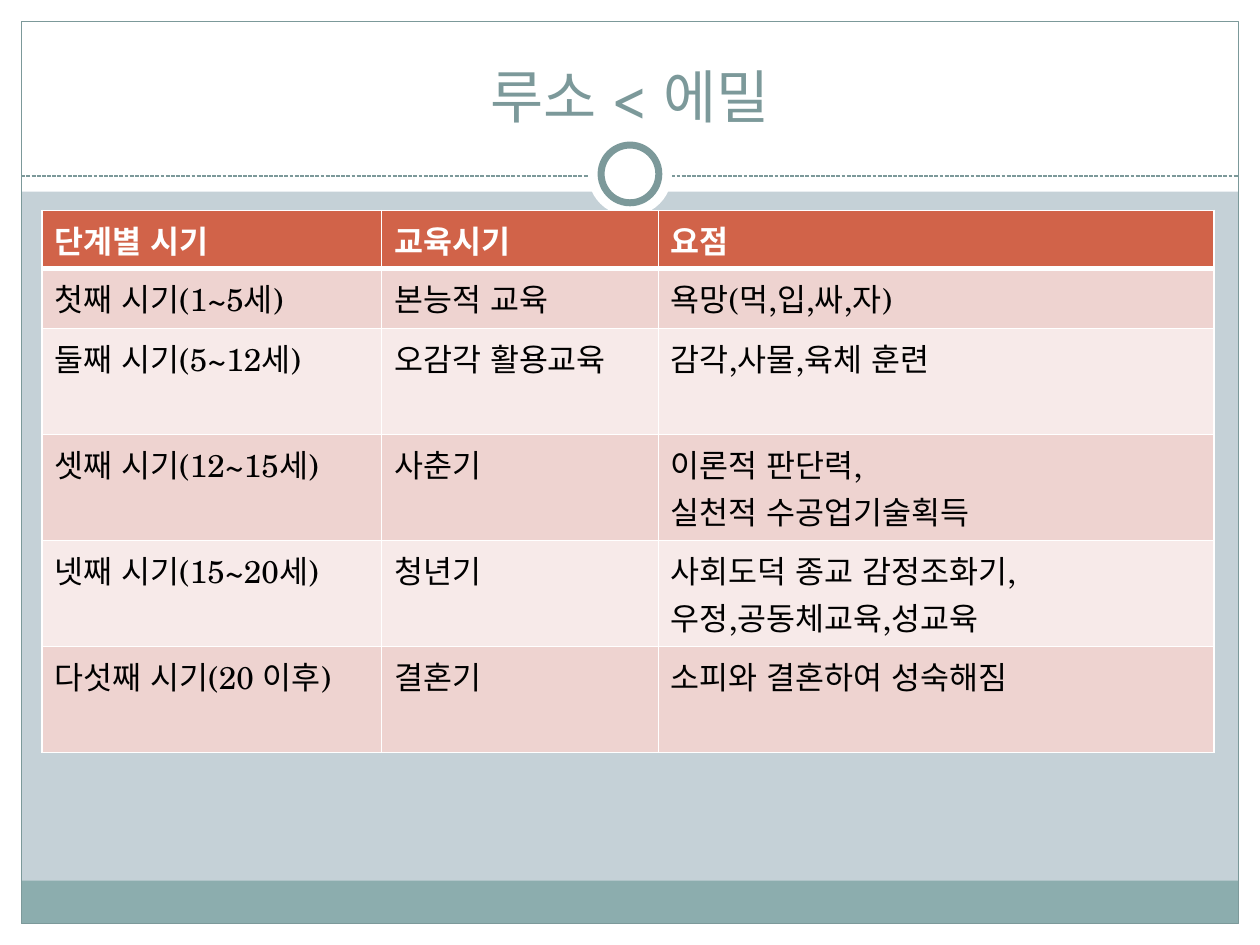
from lxml import etree
from pptx import Presentation
from pptx.dml.color import RGBColor
from pptx.enum.dml import MSO_LINE_DASH_STYLE as Dash
from pptx.enum.lang import MSO_LANGUAGE_ID as Language
from pptx.enum.shapes import MSO_CONNECTOR as Connector, MSO_SHAPE as Shape
from pptx.enum.text import MSO_ANCHOR as Anchor, PP_ALIGN as Align
from pptx.oxml.ns import qn
from pptx.util import Pt

FONT = "TeX Gyre Schola"
WHITE, BLACK, TEAL, TEAL_LIGHT = "FFFFFF", "000000", "7C999A", "8CADAE"
BACKGROUND, HEADER, BANDS = "C5D1D7", "D16349", ("EED3D0", "F7EAE9")
WIDTH, HEIGHT, MARGIN = 720, 540, 12.2

COLUMN_WIDTHS = (194.1, 158.1, 317.5)
ROW_HEIGHTS = (33.4, 34, 60.6, 60.6, 60.6, 60.6)
STAGES = (
    ("단계별 시기", "교육시기", "요점"),
    ("첫째 시기(1~5세)", "본능적 교육", "욕망(먹,입,싸,자)"),
    ("둘째 시기(5~12세)", "오감각 활용교육", "감각,사물,육체 훈련"),
    ("셋째 시기(12~15세)", "사춘기", "이론적 판단력,\n실천적 수공업기술획득"),
    ("넷째 시기(15~20세)", "청년기", "사회도덕 종교 감정조화기,\n우정,공동체교육,성교육"),
    ("다섯째 시기(20 이후)", "결혼기", "소피와 결혼하여 성숙해짐"),
)


def color(value):
    return RGBColor.from_string(value)


def set_fill(fill, value):
    fill.solid()
    fill.fore_color.rgb = color(value)


def write_text(frame, text, *, size, text_color, bold=False, align=Align.LEFT):
    """Fill a text frame, one paragraph per line of text."""
    frame.word_wrap = True
    frame.text = text
    for paragraph in frame.paragraphs:
        paragraph.alignment = align
        for run in paragraph.runs:
            font = run.font
            font.name, font.size, font.bold = FONT, Pt(size), bold
            font.color.rgb = color(text_color)
            font.language_id = Language.KOREAN


def add_shape(slide, kind, left, top, width, height, fill=None, line=None, line_width=0.75):
    shape = slide.shapes.add_shape(kind, Pt(left), Pt(top), Pt(width), Pt(height))
    shape.shadow.inherit = False
    if fill:
        set_fill(shape.fill, fill)
    else:
        shape.fill.background()
    if line:
        shape.line.color.rgb = color(line)
        shape.line.width = Pt(line_width)
    else:
        shape.line.fill.background()


def add_dashed_line(slide, left, right, y):
    line = slide.shapes.add_connector(Connector.STRAIGHT, Pt(left), Pt(y), Pt(right), Pt(y))
    line.line.color.rgb = color(TEAL)
    line.line.width = Pt(0.75)
    line.line.dash_style = Dash.SQUARE_DOT
    etree.SubElement(line._element.spPr, qn("a:effectLst"))


def add_circle(slide, center_y, diameter, **style):
    """Add a circle centred across the slide."""
    radius = diameter / 2
    add_shape(slide, Shape.OVAL, WIDTH / 2 - radius, center_y - radius,
              diameter, diameter, WHITE, **style)


def add_frame(slide):
    inner_width, inner_height = WIDTH - 2 * MARGIN, HEIGHT - 2 * MARGIN
    bottom = HEIGHT - MARGIN
    for box in ((0, bottom, WIDTH, MARGIN), (0, 0, WIDTH, 109.5),
                (0, 0, MARGIN, HEIGHT), (WIDTH - MARGIN, 0, MARGIN, HEIGHT)):
        add_shape(slide, Shape.RECTANGLE, *box, WHITE)
    add_shape(slide, Shape.RECTANGLE, MARGIN, bottom - 24.5, inner_width, 24.5, TEAL_LIGHT)
    add_shape(slide, Shape.RECTANGLE, MARGIN, MARGIN, inner_width, inner_height, line=TEAL)
    add_dashed_line(slide, MARGIN, WIDTH - MARGIN, 100.6)
    add_circle(slide, 99.4, 48)
    add_circle(slide, 99.4, 33, line=TEAL, line_width=4)


def add_title(slide, text):
    box = slide.shapes.add_textbox(Pt(24), Pt(18), Pt(672), Pt(60))
    box.text_frame.vertical_anchor = Anchor.BOTTOM
    write_text(box.text_frame, text, size=33, text_color=TEAL, align=Align.CENTER)


def set_borders(cell, top, bottom):
    """Draw white borders; the sides are one point wide."""
    properties = cell._tc.get_or_add_tcPr()
    for index, (side, width) in enumerate((("L", 1), ("R", 1), ("T", top), ("B", bottom))):
        border = etree.Element(qn(f"a:ln{side}"), w=str(Pt(width)))
        fill = etree.SubElement(border, qn("a:solidFill"))
        etree.SubElement(fill, qn("a:srgbClr"), val=WHITE)
        properties.insert(index, border)


def add_stage_table(slide):
    table = slide.shapes.add_table(
        len(STAGES), len(COLUMN_WIDTHS), Pt(24), Pt(120.2),
        Pt(sum(COLUMN_WIDTHS)), Pt(sum(ROW_HEIGHTS))).table
    for column, width in zip(table.columns, COLUMN_WIDTHS):
        column.width = Pt(width)
    for row_index, (row, height, texts) in enumerate(zip(table.rows, ROW_HEIGHTS, STAGES)):
        row.height = Pt(height)
        is_header = row_index == 0
        for cell, text in zip(row.cells, texts):
            set_fill(cell.fill, HEADER if is_header else BANDS[(row_index - 1) % 2])
            set_borders(cell, top=3 if row_index == 1 else 1, bottom=3 if is_header else 1)
            write_text(cell.text_frame, text, size=18, bold=is_header,
                       text_color=WHITE if is_header else BLACK)


def main():
    presentation = Presentation()
    presentation.slide_width, presentation.slide_height = Pt(WIDTH), Pt(HEIGHT)
    slide = presentation.slides.add_slide(presentation.slide_layouts[6])
    set_fill(slide.background.fill, BACKGROUND)
    add_frame(slide)
    add_title(slide, "루소 < 에밀")
    add_stage_table(slide)
    presentation.save("out.pptx")


if __name__ == "__main__":
    main()
